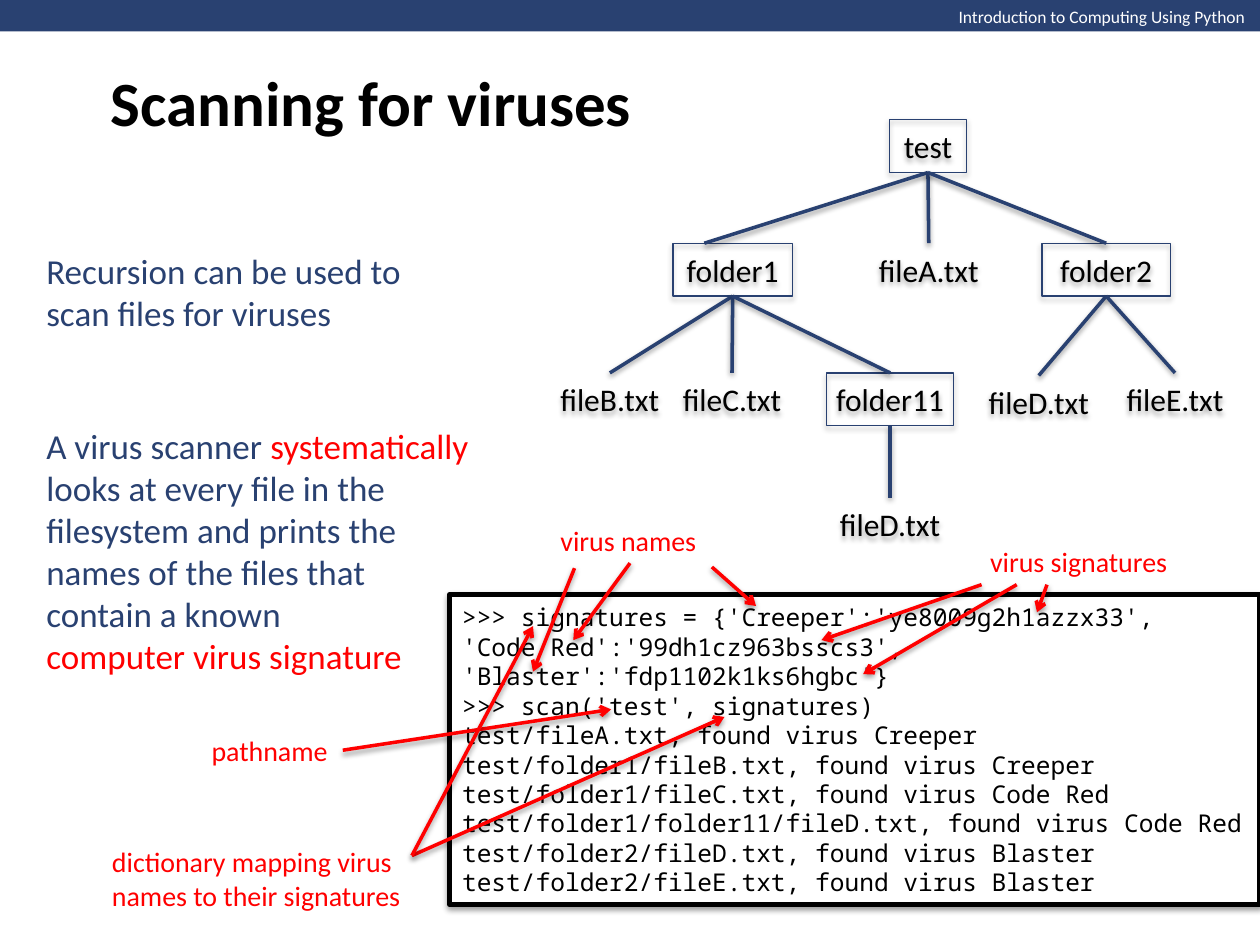
from dataclasses import dataclass
from typing import Any, NamedTuple

import lxml.etree
import pptx
import pptx.dml.color
import pptx.enum.shapes
import pptx.enum.text
import pptx.oxml.ns
import pptx.util

Pt = pptx.util.Pt
ANCHOR = pptx.enum.text.MSO_ANCHOR
ALIGN = pptx.enum.text.PP_ALIGN
AUTO_SIZE = pptx.enum.text.MSO_AUTO_SIZE
RECTANGLE = pptx.enum.shapes.MSO_SHAPE.RECTANGLE
STRAIGHT = pptx.enum.shapes.MSO_CONNECTOR.STRAIGHT
COLORS = {"navy": "294171", "red": "FF0000", "black": "000000", "white": "FFFFFF"}
BOTTOM, TOP, RIGHT = 2, 0, 3


class Span(NamedTuple):
    text: str
    color: str


class Frame(NamedTuple):
    left: float
    top: float
    width: float
    height: float


class Arrow(NamedTuple):
    start: tuple[float, float]
    end: tuple[float, float]


@dataclass
class Caption:
    frame: Frame
    paras: list[list[Span]]
    size: float
    wrap: bool = True
    bold: bool = False
    grow: bool = True
    anchor: Any = ANCHOR.MIDDLE


@dataclass
class Node:
    key: str
    left: float
    top: float
    width: float
    parent: str = ""
    boxed: bool = False
    landing: float | None = None

    @property
    def label(self) -> str:
        return self.key.split("/")[-1]


NODE_HEIGHT = 30.2
ROWS = (68.4, 139, 213.1, 284.4)
NODES = [
    Node("test", 508.3, ROWS[0], 43.9, boxed=True),
    Node("folder1", 384.5, ROWS[1], 68.4, "test", True, 402.5),
    Node("fileA.txt", 494.4, ROWS[1], 72.7, "test"),
    Node("folder2", 595.4, ROWS[1], 73.4, "test", True),
    Node("fileB.txt", 312.5, ROWS[2], 72, "folder1"),
    Node("fileC.txt", 382.3, ROWS[2], 72, "folder1"),
    Node("folder11", 472.3, ROWS[2], 72.7, "folder1", True),
    Node("folder2/fileD.txt", 555.1, ROWS[2] + 1.5, 77, "folder2"),
    Node("fileE.txt", 632.2, ROWS[2], 78.5, "folder2"),
    Node("folder11/fileD.txt", 472.3, ROWS[3], 72.7, "folder11"),
]

HEADER = Caption(Frame(540.7, 0, 180, 19.4),
                 [[Span("Introduction to Computing Using Python", "white")]],
                 10, wrap=False, anchor=ANCHOR.TOP)
TITLE = Caption(Frame(56.2, 0, 612, 115.9), [[Span("Scanning for viruses", "black")]],
                36, bold=True, grow=False)
PATHNAME = Caption(Frame(113.8, 415.4, 82.1, 26.6), [[Span("pathname", "red")]], 16, wrap=False)
CAPTIONS = [
    HEADER,
    TITLE,
    Caption(Frame(19.4, 139, 249.1, 55.4),
            [[Span("Recursion can be used to scan files for viruses", "navy")]], 20),
    Caption(Frame(19.4, 238.3, 260.6, 152.6), [
        [Span("A virus scanner ", "navy"), Span("systematically ", "red"),
         Span("looks at every file in the filesystem and prints the names of the files that", "navy")],
        [Span("contain a known", "navy")],
        [Span("computer virus signature", "red")],
    ], 20),
    Caption(Frame(56.9, 478.8, 207.4, 46.1),
            [[Span("dictionary mapping virus names to their signatures", "red")]], 16),
    Caption(Frame(313.2, 295.2, 93.6, 26.6), [[Span("virus names", "red")]], 16, wrap=False),
    Caption(Frame(558.7, 307.4, 117.4, 26.6), [[Span("virus signatures", "red")]], 16, wrap=False),
]

CODE_FRAME = Frame(257, 339.8, 463, 177.1)
CODE_LINES = [
    ">>> signatures = {'Creeper':'ye8009g2h1azzx33',",
    "'Code Red':'99dh1cz963bsscs3',",
    "'Blaster':'fdp1102k1ks6hgbc'}",
    ">>> scan('test', signatures)",
    "test/fileA.txt, found virus Creeper",
    "test/folder1/fileB.txt, found virus Creeper",
    "test/folder1/fileC.txt, found virus Code Red",
    "test/folder1/folder11/fileD.txt, found virus Code Red",
    "test/folder2/fileD.txt, found virus Blaster",
    "test/folder2/fileE.txt, found virus Blaster",
]

DICTIONARY_START = (235.4, 488.9)
PATHNAME_ARROW = Arrow((195.9, 428.7), (349.2, 405.4))
ARROWS = [
    Arrow(DICTIONARY_START, (414, 409.7)),
    Arrow(DICTIONARY_START, (304.6, 357.8)),
    Arrow((406.8, 324), (432, 346.3)),
    Arrow((360, 321.8), (327.6, 365.8)),
    Arrow((328.3, 324.7), (304.6, 383.8)),
    Arrow((598.3, 334.1), (592.6, 349.9)),
    Arrow((581, 334.1), (493.2, 385.2)),
    Arrow((560.9, 334.1), (469.4, 365.8)),
]


def rgb(color: str) -> pptx.dml.color.RGBColor:
    return pptx.dml.color.RGBColor.from_string(COLORS[color])


def apply(target: Any, formats: dict[str, Any]) -> None:
    for name, value in formats.items():
        setattr(target, name, value)


def add_child(parent: Any, tag: str, **attributes: str) -> Any:
    return lxml.etree.SubElement(parent, pptx.oxml.ns.qn(tag), attributes)


def add_shadow(effects: Any, distance: float, opacity: int) -> None:
    shadow = add_child(effects, "a:outerShdw", blurRad=str(Pt(3.1)), dist=str(Pt(distance)),
                       dir="5400000", rotWithShape="0")
    color = add_child(shadow, "a:srgbClr", val=COLORS["black"])
    add_child(color, "a:alpha", val=str(opacity * 1000))


def shade(box: Any, distance: float, opacity: int) -> None:
    box.shadow.inherit = False
    add_shadow(box._element.spPr.find(pptx.oxml.ns.qn("a:effectLst")), distance, opacity)


def write(box: Any, paras: list[list[Span]], size: float, font: str = "Calibri",
          bold: bool = False, align: Any = ALIGN.LEFT, **frame_formats: Any) -> None:
    frame = box.text_frame
    apply(frame, {"vertical_anchor": ANCHOR.MIDDLE, "auto_size": AUTO_SIZE.NONE, **frame_formats})
    for index, spans in enumerate(paras):
        para = frame.add_paragraph() if index else frame.paragraphs[0]
        para.alignment = align
        for text, color in spans:
            span = para.add_run()
            span.text = text
            apply(span.font, {"name": font, "size": Pt(size), "bold": bold})
            span.font.color.rgb = rgb(color)


def add_box(shapes: Any, frame: Frame, fill: str = "", line: str = "", weight: float = 0) -> Any:
    box = shapes.add_shape(RECTANGLE, *map(Pt, frame))
    box.shadow.inherit = False
    if fill:
        box.fill.solid()
        box.fill.fore_color.rgb = rgb(fill)
    else:
        box.fill.background()
    if line:
        box.line.color.rgb = rgb(line)
        box.line.width = Pt(weight)
    else:
        box.line.fill.background()
    return box


def add_caption(shapes: Any, caption: Caption) -> Any:
    box = shapes.add_textbox(*map(Pt, caption.frame))
    write(box, caption.paras, caption.size, bold=caption.bold, word_wrap=caption.wrap,
          vertical_anchor=caption.anchor,
          auto_size=AUTO_SIZE.SHAPE_TO_FIT_TEXT if caption.grow else AUTO_SIZE.NONE)
    return box


def add_line(shapes: Any, route: Arrow, color: str, arrowhead: bool = False) -> Any:
    line = shapes.add_connector(STRAIGHT, *map(Pt, (*route.start, *route.end)))
    line.line.color.rgb = rgb(color)
    line.line.width = Pt(2)
    if arrowhead:
        add_child(line.line._get_or_add_ln(), "a:tailEnd", type="arrow")
    add_shadow(add_child(line._element.spPr, "a:effectLst"), 1.6, 38)
    return line


def add_tree(shapes: Any, nodes: list[Node]) -> None:
    boxes: dict[str, Any] = {}
    for node in nodes:
        frame = Frame(node.left, node.top, node.width, NODE_HEIGHT)
        box = (add_box(shapes, frame, line="navy", weight=0.75) if node.boxed
               else shapes.add_textbox(*map(Pt, frame)))
        shade(box, 1.8, 35)
        write(box, [[Span(node.label, "black")]], 18, align=ALIGN.CENTER, word_wrap=False)
        boxes[node.key] = box
    for node in nodes:
        if node.parent:
            end = (node.landing or node.left + node.width / 2, node.top)
            branch = add_line(shapes, Arrow(end, end), "navy")
            branch.begin_connect(boxes[node.parent], BOTTOM)
            if node.landing is None:
                branch.end_connect(boxes[node.key], TOP)


def main() -> None:
    deck = pptx.Presentation()
    apply(deck, {"slide_width": Pt(720), "slide_height": Pt(540)})
    page = deck.slides.add_slide(deck.slide_layouts[6])
    shapes = page.shapes
    add_box(shapes, Frame(0, 0, 720, 18), fill="navy")
    add_tree(shapes.add_group_shape().shapes, NODES)
    code = add_box(shapes, CODE_FRAME, "white", "black", 3)
    shade(code, 1.6, 38)
    write(code, [[Span(text, "black")] for text in CODE_LINES], 14, "Noto Sans Mono",
          word_wrap=True, auto_size=AUTO_SIZE.SHAPE_TO_FIT_TEXT)
    for caption in CAPTIONS:
        add_caption(shapes, caption)
    pathname = add_caption(shapes, PATHNAME)
    add_line(shapes, PATHNAME_ARROW, "red", True).begin_connect(pathname, RIGHT)
    for arrow in ARROWS:
        add_line(shapes, arrow, "red", True)
    deck.save("out.pptx")


if __name__ == "__main__":
    main()
